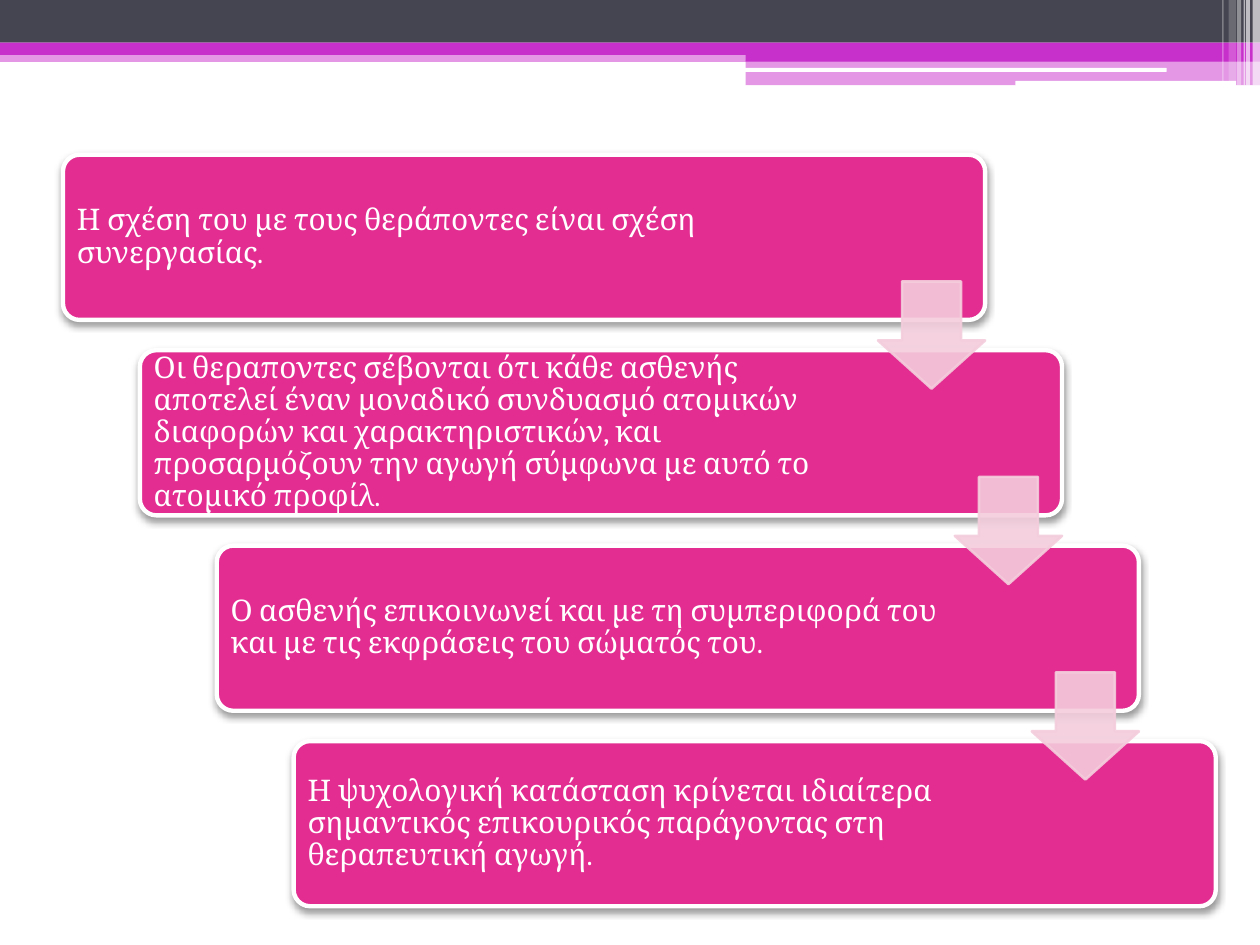
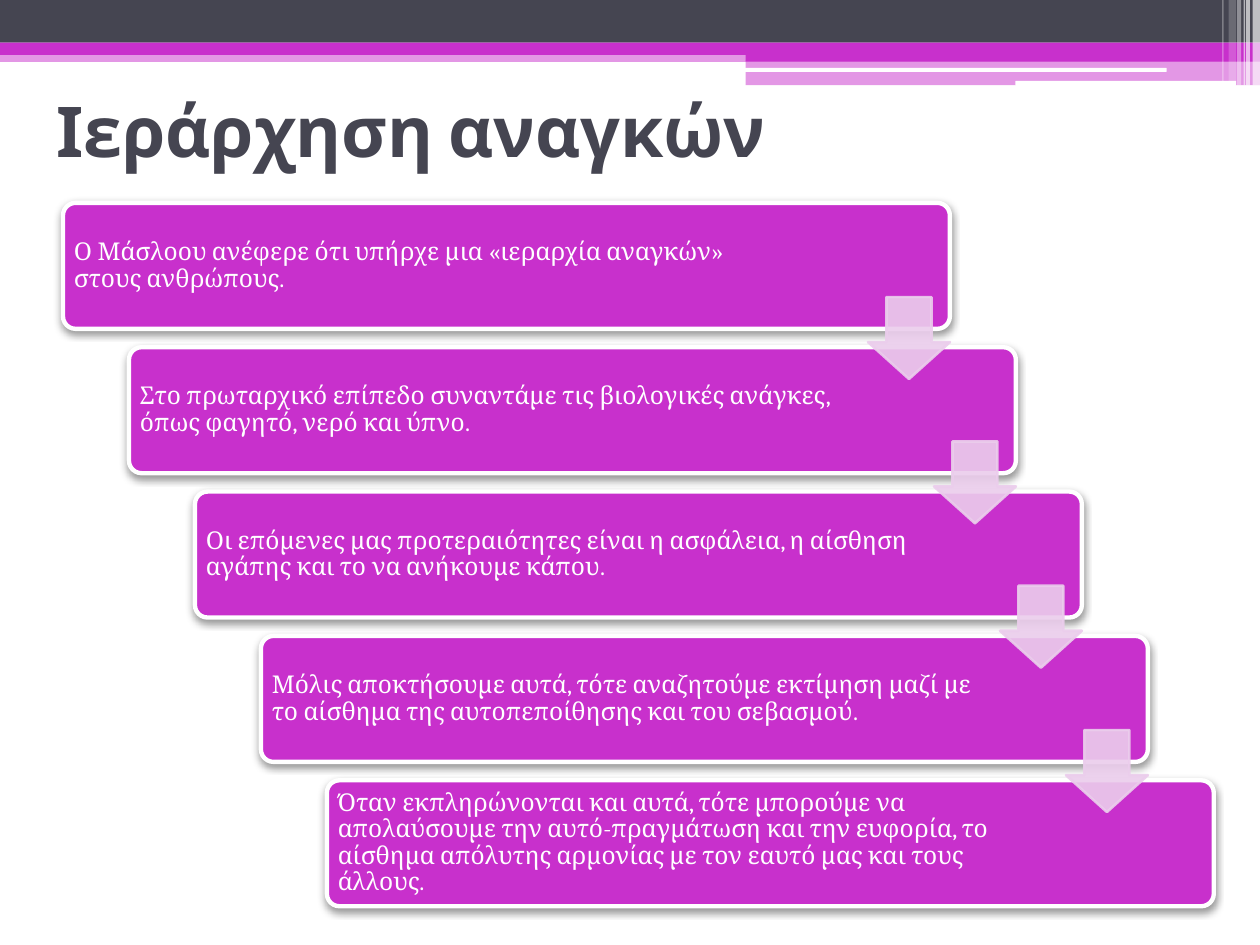
"""Builds two slides of stepped cards joined by arrows, under a shared header band."""
from lxml import etree
from pptx import Presentation
from pptx.dml.color import RGBColor
from pptx.enum.shapes import MSO_SHAPE as Preset
from pptx.enum.text import MSO_ANCHOR as Anchor, PP_ALIGN as Align
from pptx.oxml.ns import qn
from pptx.util import Cm, Pt

SLATE = RGBColor(0x45, 0x45, 0x51)
PURPLE = RGBColor(0xC8, 0x30, 0xCC)
PINK = RGBColor(0xE3, 0x2D, 0x91)
PALE_PURPLE = RGBColor(0xEB, 0xCD, 0xEC)
PALE_PINK = RGBColor(0xF4, 0xCD, 0xDC)
WHITE = RGBColor(0xFF, 0xFF, 0xFF)
BODY_FONT = "Cambria"
TITLE_FONT = "Cabin"

HEADER = [
    (Preset.RECTANGLE, (0, 1.02, 25.4, 0.23), PURPLE, 50),
    (Preset.RECTANGLE, (0, 0, 25.4, 0.86), SLATE, 100),
    (Preset.RECTANGLE, (0, 0.86, 25.4, 0.25), PURPLE, 100),
    (Preset.RECTANGLE, (15.03, 0.99, 10.37, 0.25), PURPLE, 100),
    (Preset.RECTANGLE, (15.03, 1.22, 10.37, 0.5), PURPLE, 50),
    (Preset.ROUNDED_RECTANGLE, (15.01, 1.37, 8.51, 0.08), WHITE, 100),
    (Preset.ROUNDED_RECTANGLE, (20.47, 1.63, 4.45, 0.1), WHITE, 100),
    (Preset.RECTANGLE, (25.25, 0, 0.15, 1.73), WHITE, 65),
    (Preset.RECTANGLE, (25.12, 0, 0.08, 1.73), WHITE, 65),
    (Preset.RECTANGLE, (25.07, 0, 0.03, 1.73), WHITE, 60),
    (Preset.RECTANGLE, (24.94, 0, 0.08, 1.73), WHITE, 40),
    (Preset.RECTANGLE, (24.77, 0, 0.15, 1.63), WHITE, 20),
    (Preset.RECTANGLE, (24.64, 0, 0.03, 1.63), WHITE, 30),
]

STAIRCASES = [
    dict(
        title=None, top=3.12, card=(18.59, 3.33), step=(1.55, 3.94),
        margin=0.1, text_width=14.7, inset=0.18, size=17,
        arrow=2.16, color=PINK, pale=PALE_PINK,
        texts=[
            "Η σχέση του με τους θεράποντες είναι σχέση συνεργασίας.",
            "Οι θεραποντες σέβονται ότι κάθε ασθενής αποτελεί έναν μοναδικό "
            "συνδυασμό ατομικών διαφορών και χαρακτηριστικών, και προσαρμόζουν "
            "την αγωγή σύμφωνα με αυτό το ατομικό προφίλ.",
            "Ο ασθενής επικοινωνεί και με τη συμπεριφορά του και με τις "
            "εκφράσεις του σώματός του.",
            "Η ψυχολογική κατάσταση κρίνεται ιδιαίτερα σημαντικός επικουρικός "
            "παράγοντας στη θεραπευτική αγωγή.",
        ],
    ),
    dict(
        title="Ιεράρχηση αναγκών", top=4.09, card=(17.88, 2.54), step=(1.33, 2.91),
        margin=0.07, text_width=14.75, inset=0.15, size=14,
        arrow=1.65, color=PURPLE, pale=PALE_PURPLE,
        texts=[
            "Ο Μάσλοου ανέφερε ότι υπήρχε μια «ιεραρχία αναγκών» στους ανθρώπους.",
            "Στο πρωταρχικό επίπεδο συναντάμε τις βιολογικές ανάγκες, όπως "
            "φαγητό, νερό και ύπνο.",
            "Οι επόμενες μας προτεραιότητες είναι η ασφάλεια, η αίσθηση αγάπης "
            "και το να ανήκουμε κάπου.",
            "Μόλις αποκτήσουμε αυτά, τότε αναζητούμε εκτίμηση μαζί με "
            "το αίσθημα της αυτοπεποίθησης και του σεβασμού.",
            "Όταν εκπληρώνονται και αυτά, τότε μπορούμε να απολαύσουμε την "
            "αυτό-πραγμάτωση και την ευφορία, το αίσθημα απόλυτης αρμονίας με τον "
            "εαυτό μας και τους άλλους.",
        ],
    ),
]


def draw(slide, preset, box, color, opacity=100, outline=None, width=1.5, adjust=()):
    shape = slide.shapes.add_shape(preset, *map(Cm, box))
    shape.shadow.inherit = False
    shape.fill.solid()
    shape.fill.fore_color.rgb = color
    if outline is None:
        shape.line.fill.background()
    else:
        shape.line.color.rgb = outline
        shape.line.width = Pt(width)
    for index, value in enumerate(adjust):
        shape.adjustments[index] = value
    if opacity < 100:
        for tint in shape._element.spPr.iter(qn("a:srgbClr")):
            etree.SubElement(tint, qn("a:alpha"), val=str(opacity * 1000))
    return shape


def write(slide, text, box, font=BODY_FONT, size=14, color=WHITE, bold=False,
          spacing=1.0, insets=(0.25, 0.13)):
    frame = slide.shapes.add_textbox(*map(Cm, box)).text_frame
    frame.word_wrap = True
    frame.vertical_anchor = Anchor.MIDDLE
    frame.margin_left = frame.margin_right = Cm(insets[0])
    frame.margin_top = frame.margin_bottom = Cm(insets[1])
    paragraph = frame.paragraphs[0]
    paragraph.alignment = Align.LEFT
    paragraph.line_spacing = spacing
    run = paragraph.add_run()
    run.text = text
    run.font.name = font
    run.font.size = Pt(size)
    run.font.bold = bold
    run.font.color.rgb = color


deck = Presentation()
deck.slide_width, deck.slide_height = Cm(25.4), Cm(19.05)

for stairs in STAIRCASES:
    slide = deck.slides.add_slide(deck.slide_layouts[6])
    for preset, box, color, opacity in HEADER:
        draw(slide, preset, box, color, opacity)
    if stairs["title"]:
        write(slide, stairs["title"], (0.89, 1.12, 22.86, 2.97),
              font=TITLE_FONT, size=40, color=SLATE, bold=True)

    card_width, card_height = stairs["card"]
    step_x, step_y = stairs["step"]
    margin, inset, arrow_size = stairs["margin"], stairs["inset"], stairs["arrow"]
    corners = [(1.27 + i * step_x, stairs["top"] + i * step_y)
               for i in range(len(stairs["texts"]))]

    for (left, top), text in zip(corners, stairs["texts"]):
        card = draw(slide, Preset.ROUNDED_RECTANGLE, (left, top, card_width, card_height),
                    stairs["color"], outline=WHITE, width=2.5, adjust=(0.1,))
        effects = card._element.spPr.find(qn("a:effectLst"))
        shadow = etree.SubElement(effects, qn("a:outerShdw"), blurRad=str(Pt(4.1)),
                                  dist=str(Pt(2)), dir="5400000", rotWithShape="0")
        black = etree.SubElement(shadow, qn("a:srgbClr"), val="000000")
        etree.SubElement(black, qn("a:alpha"), val="40000")
        write(slide, text,
              (left + margin, top + margin, stairs["text_width"], card_height - 2 * margin),
              size=stairs["size"], spacing=0.9, insets=(inset, inset))

    for left, top in corners[:-1]:
        gap_middle = top + (card_height + step_y) / 2
        draw(slide, Preset.DOWN_ARROW,
             (left + card_width - arrow_size, gap_middle - arrow_size / 2,
              arrow_size, arrow_size),
             stairs["pale"], 90, outline=stairs["pale"], adjust=(0.55, 0.45))

deck.save("out.pptx")
